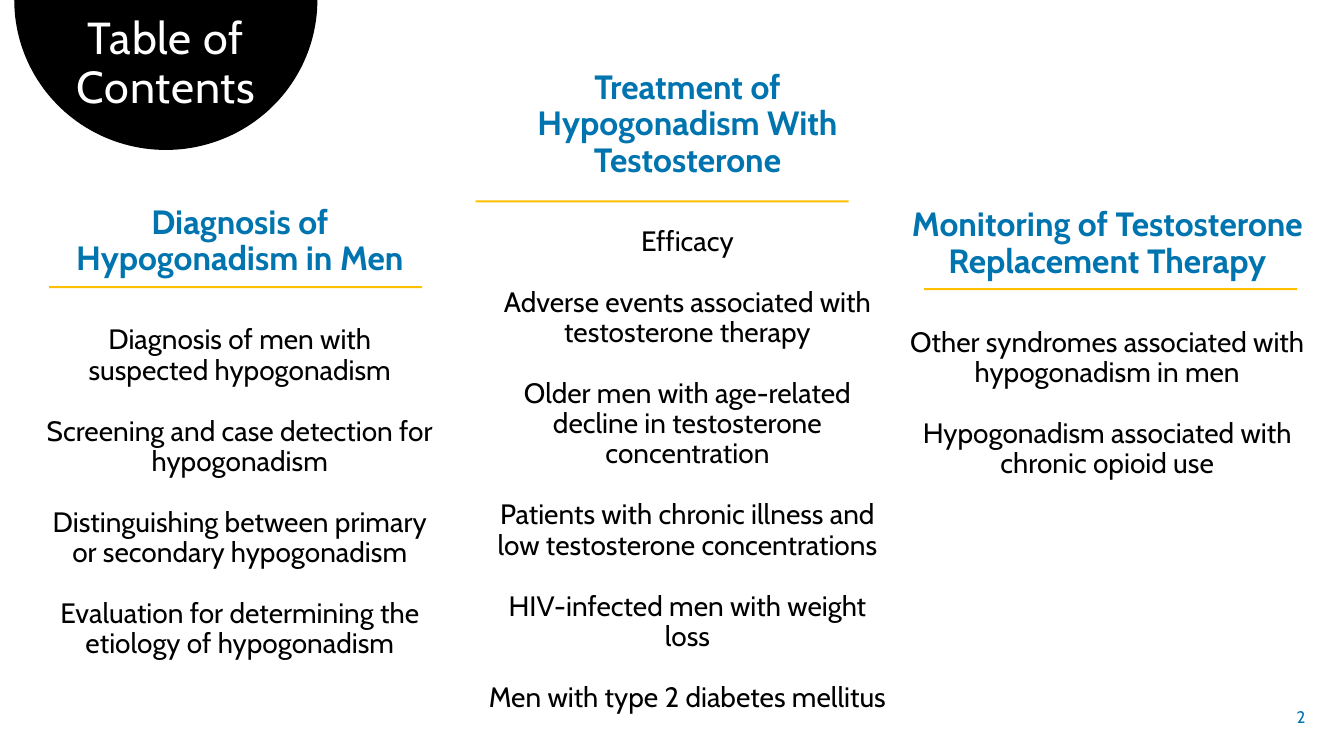
from dataclasses import dataclass
from math import cos, pi, sin

from lxml.etree import SubElement
from pptx import Presentation
from pptx.dml.color import RGBColor
from pptx.enum.shapes import MSO_SHAPE
from pptx.enum.text import MSO_ANCHOR, MSO_AUTO_SIZE, PP_ALIGN
from pptx.oxml.ns import qn
from pptx.util import Cm, Pt


@dataclass(frozen=True)
class Theme:
    font: str = "Cabin"
    black: RGBColor = RGBColor(0x00, 0x00, 0x00)
    white: RGBColor = RGBColor(0xFF, 0xFF, 0xFF)
    blue: RGBColor = RGBColor(0x00, 0x74, 0xAF)
    gold: RGBColor = RGBColor(0xFF, 0xC0, 0x00)
    title: Pt = Pt(32)
    heading: Pt = Pt(24)
    topic: Pt = Pt(20)
    number: Pt = Pt(12)


theme = Theme()


def write(para, text, size, color, bold=False, align=PP_ALIGN.CENTER, level=0,
          line=0.9, before=0, after=0, tracking=0):
    para.level, para.alignment, para.line_spacing = level, align, line
    para.space_before, para.space_after = Pt(before), Pt(after)
    properties = para._p.get_or_add_pPr()
    properties.set("marL", "0")
    properties.set("indent", "0")
    SubElement(properties, qn("a:buNone"))
    span = para.add_run()
    span.text = text
    span.font.name, span.font.size, span.font.bold = theme.font, size, bold
    span.font.color.rgb = color
    if tracking:
        span.font._element.set("spc", str(round(tracking * 100)))


def place(box, left, top, width, height, anchor=MSO_ANCHOR.TOP, wrap=True):
    box.left, box.top, box.width, box.height = Cm(left), Cm(top), Cm(width), Cm(height)
    frame = box.text_frame
    frame.auto_size = MSO_AUTO_SIZE.NONE
    frame.vertical_anchor, frame.word_wrap = anchor, wrap
    return frame


# Each column: box, gold rule position, heading, topics
columns = [
    ((0.89, 5.05, 10.31, 11.81), (1.24, 7.21), "Diagnosis of Hypogonadism in Men", [
        "Diagnosis of men with suspected hypogonadism",
        "Screening and case detection for hypogonadism",
        "Distinguishing between primary or secondary hypogonadism",
        "Evaluation for determining the etiology of hypogonadism",
    ]),
    ((11.99, 1.65, 10.67, 17.4), (11.99, 5.05), "Treatment of Hypogonadism With Testosterone", [
        "Efficacy",
        "Adverse events associated with testosterone therapy",
        "Older men with age-related decline in testosterone concentration",
        "Patients with chronic illness and low testosterone concentrations",
        "HIV-infected men with weight loss",
        "Men with type 2 diabetes mellitus",
    ]),
    ((22.66, 5.11, 10.49, 8.74), (23.29, 7.26), "Monitoring of Testosterone Replacement Therapy", [
        "Other syndromes associated with hypogonadism in men",
        "Hypogonadism associated with chronic opioid use",
    ]),
]

# Slide on the comparison layout, which offers a title and four bodies
deck = Presentation()
deck.slide_width, deck.slide_height = Cm(33.87), Cm(19.05)
page = deck.slides.add_slide(deck.slide_layouts[4])
title, *bodies, spare = page.placeholders
spare.element.getparent().remove(spare.element)

# Black half disc hanging from the top edge, behind the title
steps = 90
arc = [(Cm(4.18 + 3.82 * cos(pi * step / steps)), Cm(3.78 * sin(pi * step / steps)))
       for step in range(steps + 1)]
builder = page.shapes.build_freeform(*arc[0])
builder.add_line_segments(arc[1:])
disc = builder.convert_to_shape()
disc.shadow.inherit = False
disc.fill.solid()
disc.fill.fore_color.rgb = theme.black
disc.line.fill.background()
title.element.addprevious(disc.element)

# Title
frame = place(title, 0.89, 0.28, 6.6, 2.72)
write(frame.paragraphs[0], "Table of Contents", theme.title, theme.white, tracking=0.6)

# Columns with their gold rules
for body, (area, (left, top), heading, topics) in zip(bodies, columns):
    frame = place(body, *area)
    write(frame.paragraphs[0], heading, theme.heading, theme.blue, bold=True,
          before=10, after=24)
    for topic in topics:
        write(frame.add_paragraph(), topic, theme.topic, theme.black, level=1,
              before=10, after=12)
    rule = page.shapes.add_shape(MSO_SHAPE.RECTANGLE, Cm(left), Cm(top), Cm(9.4), Cm(0.05))
    rule.shadow.inherit = False
    rule.fill.solid()
    rule.fill.fore_color.rgb = theme.gold
    rule.line.fill.background()

# Page number
number = page.shapes.add_textbox(0, 0, 0, 0)
frame = place(number, 31.75, 17.55, 1.4, 1.02, anchor=MSO_ANCHOR.MIDDLE, wrap=False)
write(frame.paragraphs[0], "2", theme.number, theme.blue, align=PP_ALIGN.RIGHT, line=1.0)

deck.save("out.pptx")
